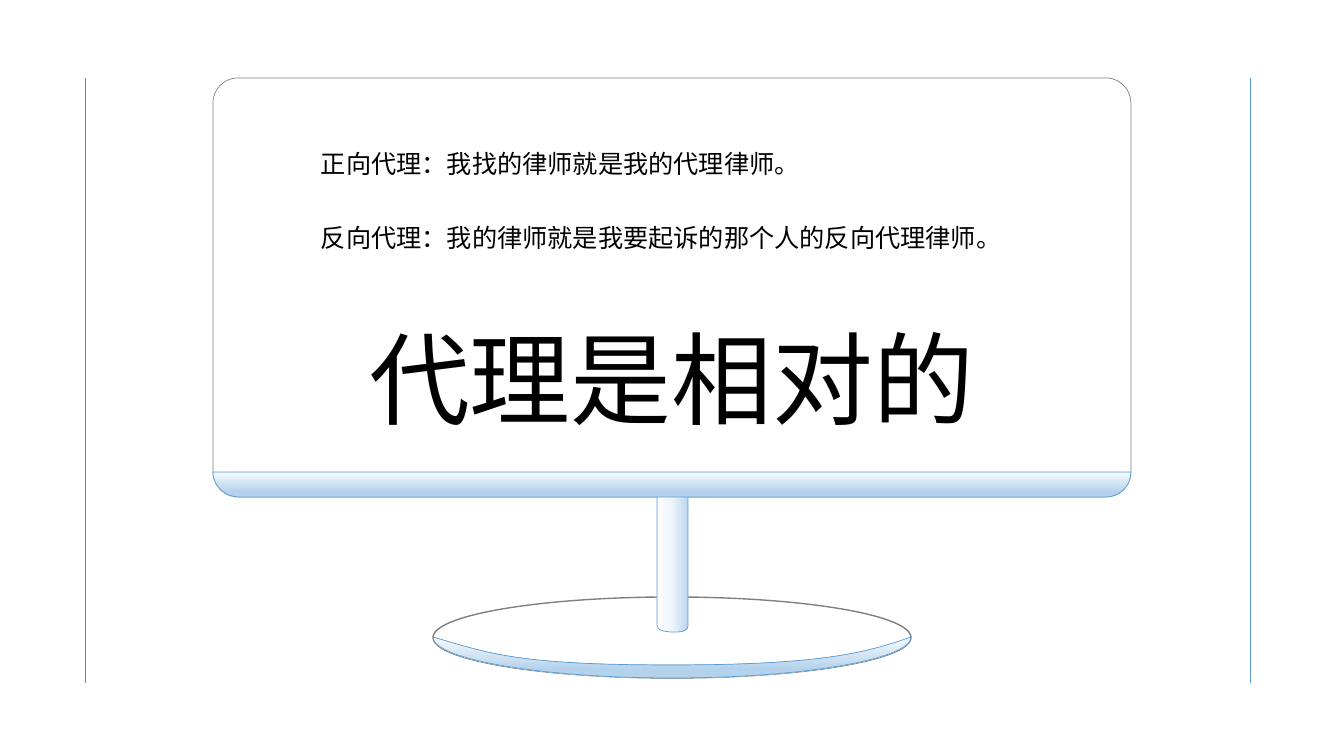
from pptx import Presentation
from pptx import util as u
from pptx.dml.color import RGBColor
from pptx.enum import shapes, text
from pptx.oxml import parse_xml
from pptx.oxml.ns import nsdecls, qn

SCALE = 12192000 / 1344
CJK = "Noto Sans CJK SC"
COLORS = {"white": "FFFFFF", "black": "000000", "gray": "808080",
          "blue": "5B9BD5", "pale": "EFF6FC", "light": "BDD7EE", "soft": "B5D2EC"}
GLOSS = [(10, "pale"), (79, "soft")]
SHEEN = [(0, "white"), (47, "pale"), (99, "light")]

STAND = [(680, 484), (684, 484, 688, 488, 688, 492), (688, 626),
         (687, 633, 678, 632, 672, 632), (668, 632, 657, 631, 657, 626),
         (657, 492), (657, 488, 661, 484, 665, 484)]
BEZEL = [(1131, 472), (1131, 486, 1120, 497, 1106, 497), (239, 497),
         (225, 497, 213, 486, 213, 472)]
BASE_RIM = [(433, 637), (491, 654, 519, 665, 672, 665),
            (825, 665, 868, 652, 911, 637), (911, 659, 804, 678, 672, 678),
            (540, 678, 433, 659, 433, 637)]


def px(n):
    return u.Emu(round(n * SCALE))


def rgb(name):
    return RGBColor.from_string(COLORS[name])


def outline(sp, color, width):
    sp.line.color.rgb = rgb(color)
    sp.line.width = u.Pt(width)


def add_panel(s, kind, box, width, fill=None):
    sp = s.shapes.add_shape(kind, *map(px, box))
    sp.shadow.inherit = False
    if fill:
        sp.fill.solid()
        sp.fill.fore_color.rgb = rgb(fill)
    else:
        sp.fill.background()
    outline(sp, "gray", width)
    return sp


def set_gradient(sp, stops, angle):
    sp.fill.background()
    stop_xml = "".join(
        f'<a:gs pos="{pos * 1000}"><a:srgbClr val="{COLORS[color]}"/></a:gs>'
        for pos, color in stops)
    grad = parse_xml(f'<a:gradFill {nsdecls("a")} rotWithShape="1"><a:gsLst>{stop_xml}</a:gsLst>'
                     f'<a:lin ang="{angle * 60000}" scaled="0"/></a:gradFill>')
    props = sp.element.spPr
    props.replace(props.find(qn("a:noFill")), grad)


def bend(sp, segments):
    sides = list(sp.element.iter(qn("a:lnTo")))
    for side, seg in zip(sides, segments):
        if len(seg) == 6:
            pts = "".join(f'<a:pt x="{px(x) - sp.left}" y="{px(y) - sp.top}"/>'
                          for x, y in zip(seg[::2], seg[1::2]))
            curve = parse_xml(f'<a:cubicBezTo {nsdecls("a")}>{pts}</a:cubicBezTo>')
            side.getparent().replace(side, curve)


def add_outline(s, segments, stops, angle):
    ends = [(px(seg[-2]), px(seg[-1])) for seg in segments]
    builder = s.shapes.build_freeform(*ends[0], scale=1.0)
    builder.add_line_segments(ends[1:], close=False)
    sp = builder.convert_to_shape()
    bend(sp, segments[1:])
    path = next(sp.element.iter(qn("a:path")))
    path.append(parse_xml(f'<a:close {nsdecls("a")}/>'))
    sp.shadow.inherit = False
    set_gradient(sp, stops, angle)
    outline(sp, "blue", 0.5)


def add_side_line(s, x, color):
    line = s.shapes.add_connector(shapes.MSO_CONNECTOR.STRAIGHT, px(x), px(683), px(x), px(78))
    outline(line, color, 0.5)
    line.element.spPr.append(parse_xml(f'<a:effectLst {nsdecls("a")}/>'))


def write(sp, wording, size, font, align):
    tf = sp.text_frame
    tf.text = wording
    tf.word_wrap = False
    tf.auto_size = text.MSO_AUTO_SIZE.SHAPE_TO_FIT_TEXT
    tf.vertical_anchor = text.MSO_ANCHOR.TOP
    p = tf.paragraphs[0]
    p.alignment = align
    r = p.runs[0]
    r.font.size = u.Pt(size)
    r.font.color.rgb = rgb("black")
    r.font.name = font
    latin = next(tf.paragraphs[0].runs[0].font.fill and sp.element.iter(qn("a:latin")))
    latin.addnext(parse_xml(f'<a:ea {nsdecls("a")} typeface="{CJK}"/>'))


def add_note(s, box, wording):
    write(s.shapes.add_textbox(*map(px, box)), wording, 18, "Arial", text.PP_ALIGN.LEFT)


def place_title(s, box, wording):
    sp = s.shapes.title
    sp.left, sp.top, sp.width, sp.height = map(px, box)
    write(sp, wording, 72, CJK, text.PP_ALIGN.CENTER)
    s.shapes.element.append(sp.element)


def main():
    """Build a slide with a monitor that explains forward and reverse proxies."""
    prs = Presentation()
    prs.slide_width, prs.slide_height = px(1344), px(756)
    s = prs.slides.add_slide(prs.slide_layouts[5])
    add_panel(s, shapes.MSO_SHAPE.OVAL, (433, 597, 478, 81), 1)
    screen = add_panel(s, shapes.MSO_SHAPE.ROUNDED_RECTANGLE, (213, 78, 918, 419), 0.5, "white")
    screen.adjustments[0] = 0.06
    add_outline(s, STAND, SHEEN, 0)
    add_outline(s, BEZEL, GLOSS, 90)
    add_outline(s, BASE_RIM, GLOSS, 90)
    add_side_line(s, 85, "gray")
    add_side_line(s, 1250, "blue")
    add_note(s, (311, 143, 499, 40), "正向代理：我找的律师就是我的代理律师。")
    add_note(s, (311, 217, 700, 40), "反向代理：我的律师就是我要起诉的那个人的反向代理律师。")
    place_title(s, (359, 312, 625, 132), "代理是相对的")
    prs.save("out.pptx")


if __name__ == "__main__":
    main()
